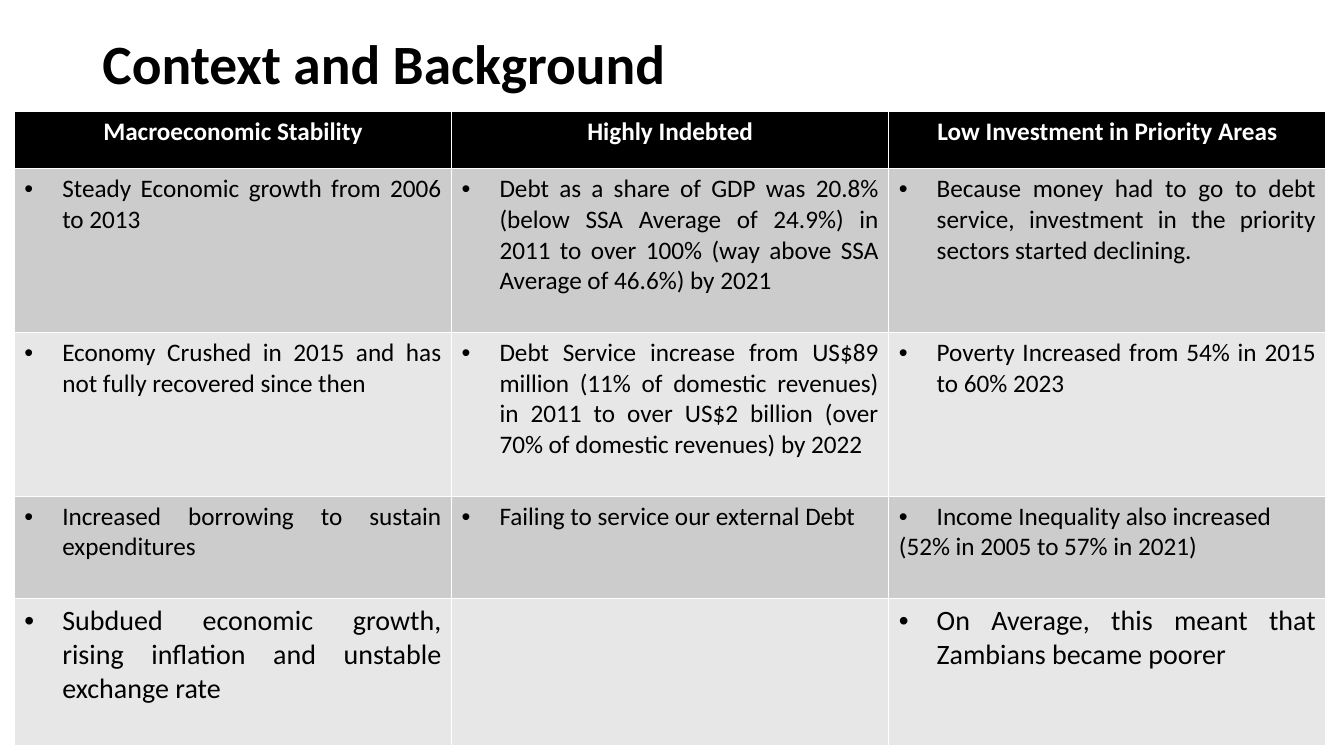
"""Build the Context and Background slide with its three-column table."""
from pptx import Presentation
from pptx.dml.color import RGBColor
from pptx.enum.text import MSO_ANCHOR, MSO_AUTO_SIZE, PP_ALIGN
from pptx.oxml.ns import qn
from pptx.util import Pt
from lxml.etree import SubElement

BLACK = RGBColor(0x00, 0x00, 0x00)
WHITE = RGBColor(0xFF, 0xFF, 0xFF)
DARK_BAND = RGBColor(0xCC, 0xCC, 0xCC)
LIGHT_BAND = RGBColor(0xE7, 0xE7, 0xE7)
BULLET_INDENT = Pt(27)

HEADINGS = ["Macroeconomic Stability", "Highly Indebted", "Low Investment in Priority Areas"]
POINTS = [
    ["Steady Economic growth from 2006 to 2013",
     "Debt as a share of GDP was 20.8% (below SSA Average of 24.9%) in 2011 "
     "to over 100% (way above SSA Average of 46.6%) by 2021",
     "Because money had to go to debt service, investment in the priority "
     "sectors started declining."],
    ["Economy Crushed in 2015 and has not fully recovered since then",
     "Debt Service increase from US$89 million (11% of domestic revenues) in 2011 "
     "to over US$2 billion (over 70% of domestic revenues) by 2022",
     "Poverty Increased from 54% in 2015 to 60% 2023"],
    ["Increased borrowing to sustain expenditures",
     "Failing to service our external Debt",
     "Income Inequality also increased\n(52% in 2005 to 57% in 2021)"],
    ["Subdued economic growth, rising inflation and unstable exchange rate",
     "",
     "On Average, this meant that Zambians became poorer"],
]
ROW_HEIGHTS = [41, 117, 117, 73, 105]
COLUMN_WIDTH = 312.3


def format_font(font, size, color, bold):
    for attribute, value in {"name": "Calibri", "size": Pt(size), "bold": bold}.items():
        setattr(font, attribute, value)
    font.color.rgb = color


def add_bullet(paragraph):
    properties = paragraph._p.get_or_add_pPr()
    properties.set("marL", str(BULLET_INDENT))
    properties.set("indent", str(-BULLET_INDENT))
    SubElement(properties, qn("a:buFont"), typeface="Arial")
    SubElement(properties, qn("a:buChar"), char="•")


deck = Presentation()
deck.slide_width, deck.slide_height = Pt(960), Pt(540)
slide = deck.slides.add_slide(deck.slide_layouts[5])

title = slide.shapes.title
title_place = {"left": 66, "top": 28.8, "width": 828, "height": 38}
for attribute, value in title_place.items():
    setattr(title, attribute, Pt(value))
heading = title.text_frame
heading.text = "Context and Background"
heading.auto_size = MSO_AUTO_SIZE.NONE
heading.vertical_anchor = MSO_ANCHOR.MIDDLE
heading.paragraphs[0].alignment = PP_ALIGN.LEFT
heading.paragraphs[0].line_spacing = 0.9
format_font(heading.paragraphs[0].runs[0].font, 39.6, BLACK, True)

context = slide.shapes.add_table(
    len(ROW_HEIGHTS), len(HEADINGS), Pt(10.3), Pt(79.4),
    Pt(COLUMN_WIDTH * len(HEADINGS)), Pt(sum(ROW_HEIGHTS))).table
for column in context.columns:
    column.width = Pt(COLUMN_WIDTH)

for row_index, texts in enumerate([HEADINGS] + POINTS):
    context.rows[row_index].height = Pt(ROW_HEIGHTS[row_index])
    is_header = row_index == 0
    band = BLACK if is_header else DARK_BAND if row_index % 2 else LIGHT_BAND
    size = 20 if row_index == len(POINTS) else 18
    for column_index, text in enumerate(texts):
        cell = context.cell(row_index, column_index)
        cell.fill.solid()
        cell.fill.fore_color.rgb = band
        cell.text = text
        for line_index, line in enumerate(cell.text_frame.paragraphs):
            line.alignment = PP_ALIGN.CENTER if is_header else PP_ALIGN.JUSTIFY
            if text and not is_header and line_index == 0:
                add_bullet(line)
            for run in line.runs:
                format_font(run.font, size, WHITE if is_header else BLACK, is_header)

deck.save("out.pptx")
